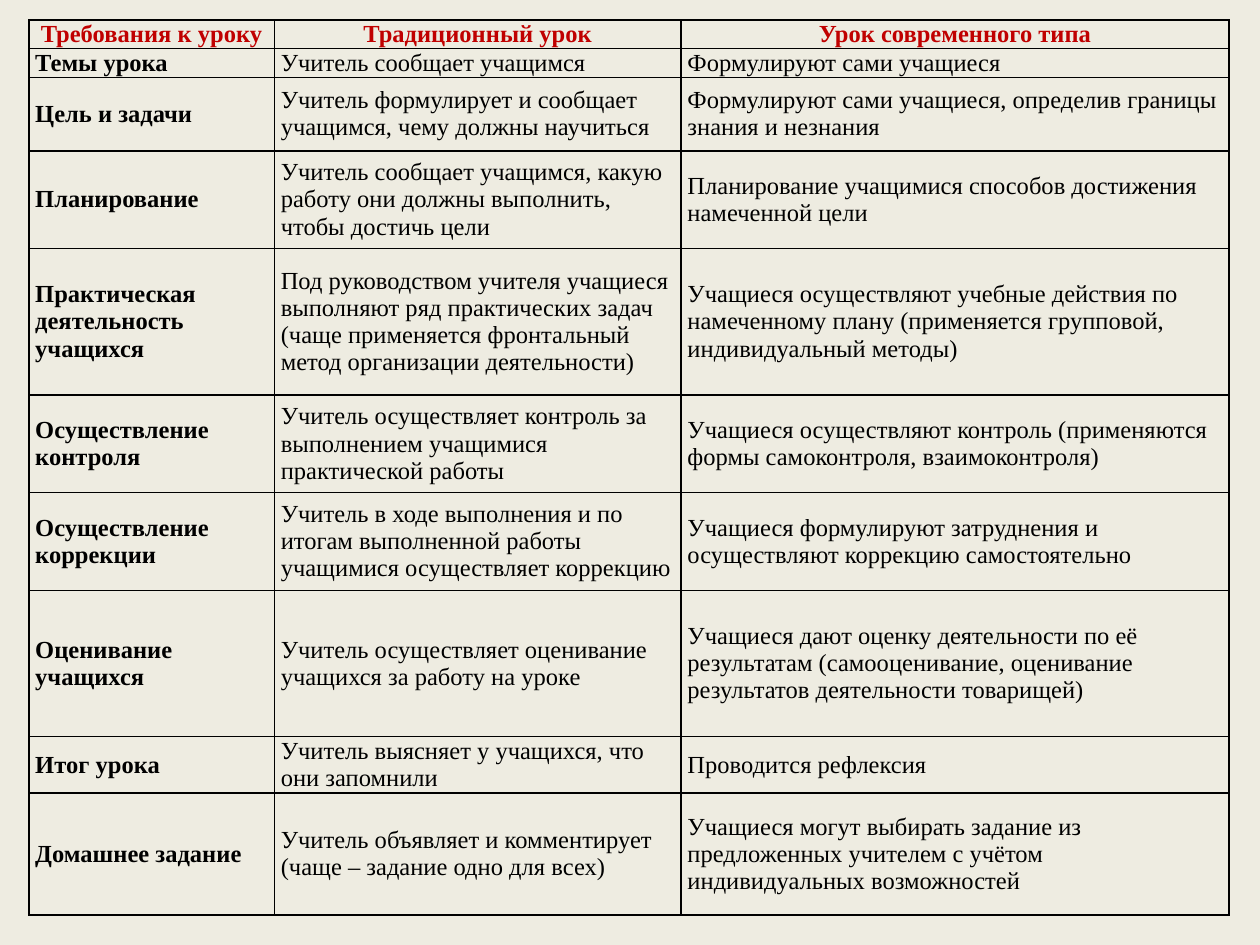
from typing import NamedTuple

from lxml.etree import SubElement
from pptx import Presentation
from pptx.dml.color import RGBColor
from pptx.enum.text import MSO_ANCHOR, PP_ALIGN
from pptx.oxml.ns import qn
from pptx.util import Cm, Pt

BACKGROUND = RGBColor(0xEE, 0xEC, 0xE1)
BLACK = RGBColor(0x00, 0x00, 0x00)
RED = RGBColor(0xC0, 0x00, 0x00)
FONT = "Times New Roman"


class LessonRow(NamedTuple):
    height: float
    requirement: str
    traditional: str
    modern: str


COLUMN_WIDTHS = (4.95, 8.2, 11.05)
ROWS = (
    LessonRow(0.58, "Требования к уроку", "Традиционный урок", "Урок современного типа"),
    LessonRow(0.58, "Темы урока", "Учитель сообщает учащимся", "Формулируют сами учащиеся"),
    LessonRow(1.48, "Цель и задачи",
              "Учитель формулирует и сообщает учащимся, чему должны научиться",
              "Формулируют сами учащиеся, определив границы знания и незнания"),
    LessonRow(1.97, "Планирование",
              "Учитель сообщает учащимся, какую работу они должны выполнить, "
              "чтобы достичь цели",
              "Планирование учащимися способов достижения намеченной цели"),
    LessonRow(2.95, "Практическая деятельность учащихся",
              "Под руководством учителя учащиеся выполняют ряд практических задач "
              "(чаще применяется фронтальный метод организации деятельности)",
              "Учащиеся осуществляют учебные действия по намеченному плану "
              "(применяется групповой, индивидуальный методы)"),
    LessonRow(1.97, "Осуществление контроля",
              "Учитель осуществляет контроль за выполнением учащимися практической работы",
              "Учащиеся осуществляют контроль (применяются формы самоконтроля, "
              "взаимоконтроля)"),
    LessonRow(1.97, "Осуществление коррекции",
              "Учитель в ходе выполнения и по итогам выполненной работы учащимися "
              "осуществляет коррекцию",
              "Учащиеся формулируют затруднения и осуществляют коррекцию самостоятельно"),
    LessonRow(2.95, "Оценивание учащихся",
              "Учитель осуществляет оценивание учащихся за работу на уроке",
              "Учащиеся дают оценку деятельности по её результатам (самооценивание, "
              "оценивание результатов деятельности товарищей)"),
    LessonRow(1.14, "Итог урока",
              "Учитель выясняет у учащихся, что они запомнили",
              "Проводится рефлексия"),
    LessonRow(2.46, "Домашнее задание",
              "Учитель объявляет и комментирует (чаще – задание одно для всех)",
              "Учащиеся могут выбирать задание из предложенных учителем с учётом "
              "индивидуальных возможностей"),
)


def write_text(cell, text: str, *, bold: bool = False, color: RGBColor = BLACK,
               align: PP_ALIGN = PP_ALIGN.LEFT) -> None:
    para = cell.text_frame.paragraphs[0]
    para.alignment = align
    span = para.add_run()
    span.text = text
    span.font.name = FONT
    span.font.size = Pt(14)
    span.font.bold = bold
    span.font.color.rgb = color


def style_cell(cell) -> None:
    """Set margins and anchor, draw four thin borders and clear the fill."""
    cell.margin_left = cell.margin_right = Cm(0.13)
    cell.margin_top = cell.margin_bottom = 0
    cell.vertical_anchor = MSO_ANCHOR.MIDDLE
    properties = cell._tc.get_or_add_tcPr()
    for side in ("a:lnL", "a:lnR", "a:lnT", "a:lnB"):
        line = SubElement(properties, qn(side), w=str(Pt(1)))
        solid = SubElement(line, qn("a:solidFill"))
        SubElement(solid, qn("a:srgbClr"), val=str(BLACK))
    cell.fill.background()


def add_lesson_table(page) -> None:
    frame = page.shapes.add_table(
        len(ROWS), len(COLUMN_WIDTHS), Cm(0.58), Cm(0.4),
        Cm(sum(COLUMN_WIDTHS)), Cm(sum(row.height for row in ROWS)))
    table = frame.table
    table.horz_banding = False
    for column, width in zip(table.columns, COLUMN_WIDTHS):
        column.width = Cm(width)
    for row_index, lesson in enumerate(ROWS):
        table.rows[row_index].height = Cm(lesson.height)
        header = row_index == 0
        for column_index, text in enumerate(lesson[1:]):
            cell = table.cell(row_index, column_index)
            style_cell(cell)
            write_text(cell, text, bold=header or column_index == 0,
                       color=RED if header else BLACK,
                       align=PP_ALIGN.CENTER if header else PP_ALIGN.LEFT)


def main() -> None:
    deck = Presentation()
    deck.slide_width, deck.slide_height = Cm(25.4), Cm(19.05)
    page = deck.slides.add_slide(deck.slide_layouts[6])
    page.background.fill.solid()
    page.background.fill.fore_color.rgb = BACKGROUND
    add_lesson_table(page)
    deck.save("out.pptx")


if __name__ == "__main__":
    main()
